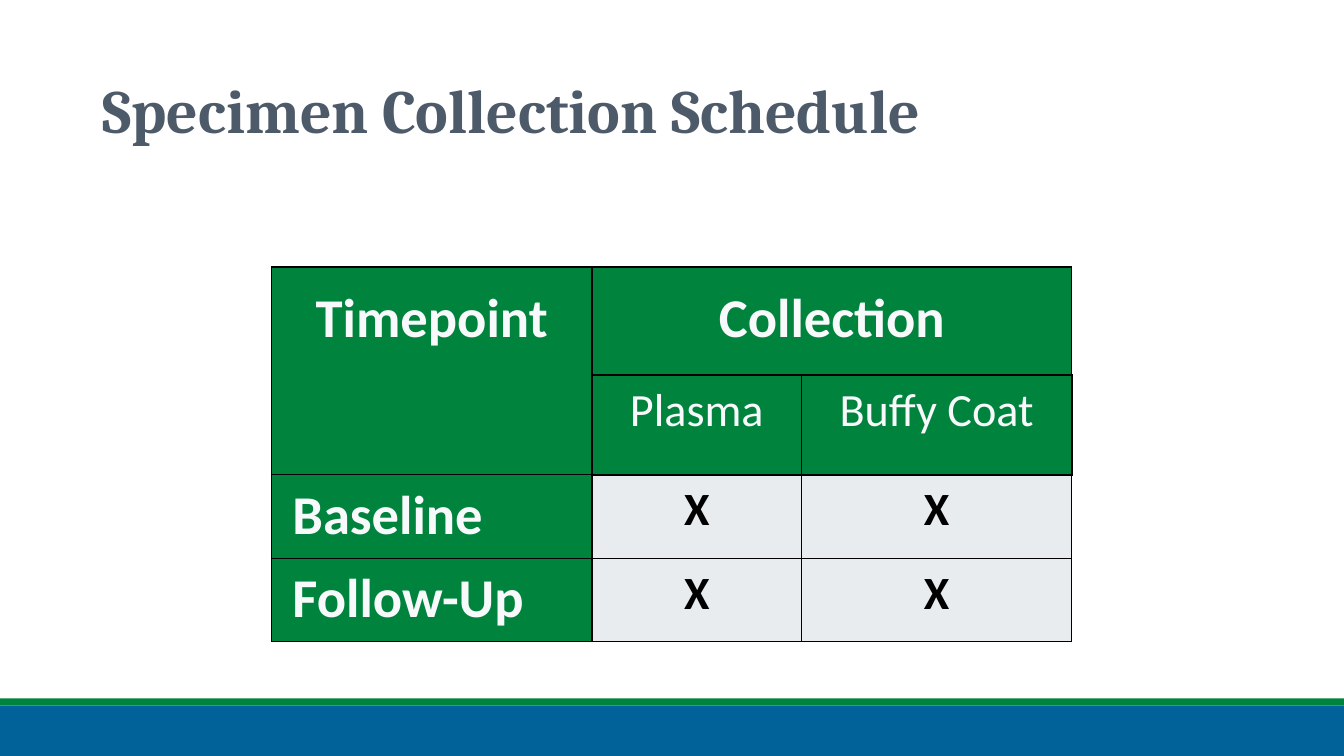
from dataclasses import dataclass

import pptx
import pptx.dml.color
import pptx.enum.shapes
import pptx.enum.text
import pptx.oxml.ns
import pptx.util
from lxml import etree

Cm = pptx.util.Cm
Pt = pptx.util.Pt
RGBColor = pptx.dml.color.RGBColor
PP_ALIGN = pptx.enum.text.PP_ALIGN
MSO_ANCHOR = pptx.enum.text.MSO_ANCHOR

BLUE = RGBColor(0x00, 0x62, 0x98)
GREEN = RGBColor(0x00, 0x84, 0x3D)
SLATE = RGBColor(0x4D, 0x5A, 0x69)
OFF_WHITE = RGBColor(0xF8, 0xF9, 0xFA)
PALE_GREY = RGBColor(0xE9, 0xEC, 0xEF)
BLACK = RGBColor(0x00, 0x00, 0x00)

SLIDE_WIDTH, SLIDE_HEIGHT = 33.87, 19.05
COLUMN_WIDTHS = [8.08, 5.28, 6.81]
ROW_HEIGHTS = [2.72, 2.49, 2.1, 2.1]
THIN, THICK = 1, 1.5


@dataclass(frozen=True)
class Band:
    top: float
    height: float
    color: RGBColor


@dataclass(frozen=True)
class CellStyle:
    size: float
    bold: bool
    color: RGBColor
    fill: RGBColor
    align: PP_ALIGN = PP_ALIGN.CENTER
    side_margin: float = 0.53
    top_margin: float = 0.08
    bottom_margin: float = 0


@dataclass(frozen=True)
class Entry:
    row: int
    column: int
    text: str
    style: CellStyle


HEADING = CellStyle(39, True, OFF_WHITE, GREEN, PP_ALIGN.CENTER, 0.71, 0.36, 0.36)
SPECIMEN = CellStyle(33, False, OFF_WHITE, GREEN)
TIMEPOINT = CellStyle(39, True, OFF_WHITE, GREEN, PP_ALIGN.LEFT)
MARK = CellStyle(33, True, BLACK, PALE_GREY)

BANDS = [Band(17.78, 1.27, BLUE), Band(17.6, 0.18, GREEN)]
ENTRIES = [
    Entry(0, 0, "Timepoint", HEADING),
    Entry(0, 1, "Collection", HEADING),
    Entry(1, 1, "Plasma", SPECIMEN),
    Entry(1, 2, "Buffy Coat", SPECIMEN),
    Entry(2, 0, "Baseline", TIMEPOINT),
    Entry(3, 0, "Follow-Up", TIMEPOINT),
] + [Entry(row, column, "X", MARK) for row in (2, 3) for column in (1, 2)]


def add_band(slide, band: Band) -> None:
    bar = slide.shapes.add_shape(
        pptx.enum.shapes.MSO_SHAPE.RECTANGLE,
        Cm(0), Cm(band.top), Cm(SLIDE_WIDTH), Cm(band.height))
    bar.shadow.inherit = False
    bar.fill.solid()
    bar.fill.fore_color.rgb = band.color
    bar.line.fill.background()


def format_title(title) -> None:
    title.left, title.top = Cm(2.33), Cm(1.02)
    title.width, title.height = Cm(29.21), Cm(3.67)
    frame = title.text_frame
    frame.text = "Specimen Collection Schedule"
    frame.word_wrap = True
    frame.auto_size = pptx.enum.text.MSO_AUTO_SIZE.NONE
    frame.vertical_anchor = MSO_ANCHOR.MIDDLE
    heading = frame.paragraphs[0]
    heading.alignment = PP_ALIGN.LEFT
    heading.line_spacing = 0.9
    heading.font.name = "Cambria"
    heading.font.size = Pt(44)
    heading.font.bold = True
    heading.font.color.rgb = SLATE


def border_widths(row: int, column: int) -> dict[str, float]:
    """Thick lines frame the two Collection header rows."""
    in_header = row < 2
    return {
        "a:lnL": THICK if in_header and column == 1 else THIN,
        "a:lnR": THICK if in_header and column in (0, 2) else THIN,
        "a:lnT": THICK if row in (0, 2) and column > 0 else THIN,
        "a:lnB": THICK if row == 1 and column > 0 else THIN,
    }


def set_borders(cell, widths: dict[str, float]) -> None:
    qn = pptx.oxml.ns.qn
    properties = cell._tc.get_or_add_tcPr()
    for tag, width in widths.items():
        line = etree.SubElement(properties, qn(tag), w=str(Pt(width)))
        fill = etree.SubElement(line, qn("a:solidFill"))
        etree.SubElement(fill, qn("a:srgbClr"), val=str(BLACK))


def fill_cell(cell, text: str, style: CellStyle) -> None:
    cell.fill.solid()
    cell.fill.fore_color.rgb = style.fill
    cell.margin_left = cell.margin_right = Cm(style.side_margin)
    cell.margin_top = Cm(style.top_margin)
    cell.margin_bottom = Cm(style.bottom_margin)
    cell.vertical_anchor = MSO_ANCHOR.TOP
    cell.text = text
    label = cell.text_frame.paragraphs[0]
    label.alignment = style.align
    label.line_spacing = 1.07
    label.font.name = "Calibri"
    label.font.size = Pt(style.size)
    label.font.bold = style.bold
    label.font.color.rgb = style.color


def add_schedule(slide) -> None:
    schedule = slide.shapes.add_table(
        len(ROW_HEIGHTS), len(COLUMN_WIDTHS), Cm(6.84), Cm(6.73),
        Cm(sum(COLUMN_WIDTHS)), Cm(sum(ROW_HEIGHTS))).table
    schedule.horz_banding = False
    for column, width in zip(schedule.columns, COLUMN_WIDTHS):
        column.width = Cm(width)
    for row, height in zip(schedule.rows, ROW_HEIGHTS):
        row.height = Cm(height)
    schedule.cell(0, 0).merge(schedule.cell(1, 0))
    schedule.cell(0, 1).merge(schedule.cell(0, 2))
    for row in range(len(ROW_HEIGHTS)):
        for column in range(len(COLUMN_WIDTHS)):
            set_borders(schedule.cell(row, column), border_widths(row, column))
    for entry in ENTRIES:
        fill_cell(schedule.cell(entry.row, entry.column), entry.text, entry.style)


def main() -> None:
    presentation = pptx.Presentation()
    presentation.slide_width = Cm(SLIDE_WIDTH)
    presentation.slide_height = Cm(SLIDE_HEIGHT)
    slide = presentation.slides.add_slide(presentation.slide_layouts[5])

    # Footer bands
    for band in BANDS:
        add_band(slide, band)

    # Title and collection schedule
    format_title(slide.shapes.title)
    add_schedule(slide)

    presentation.save("out.pptx")


if __name__ == "__main__":
    main()
